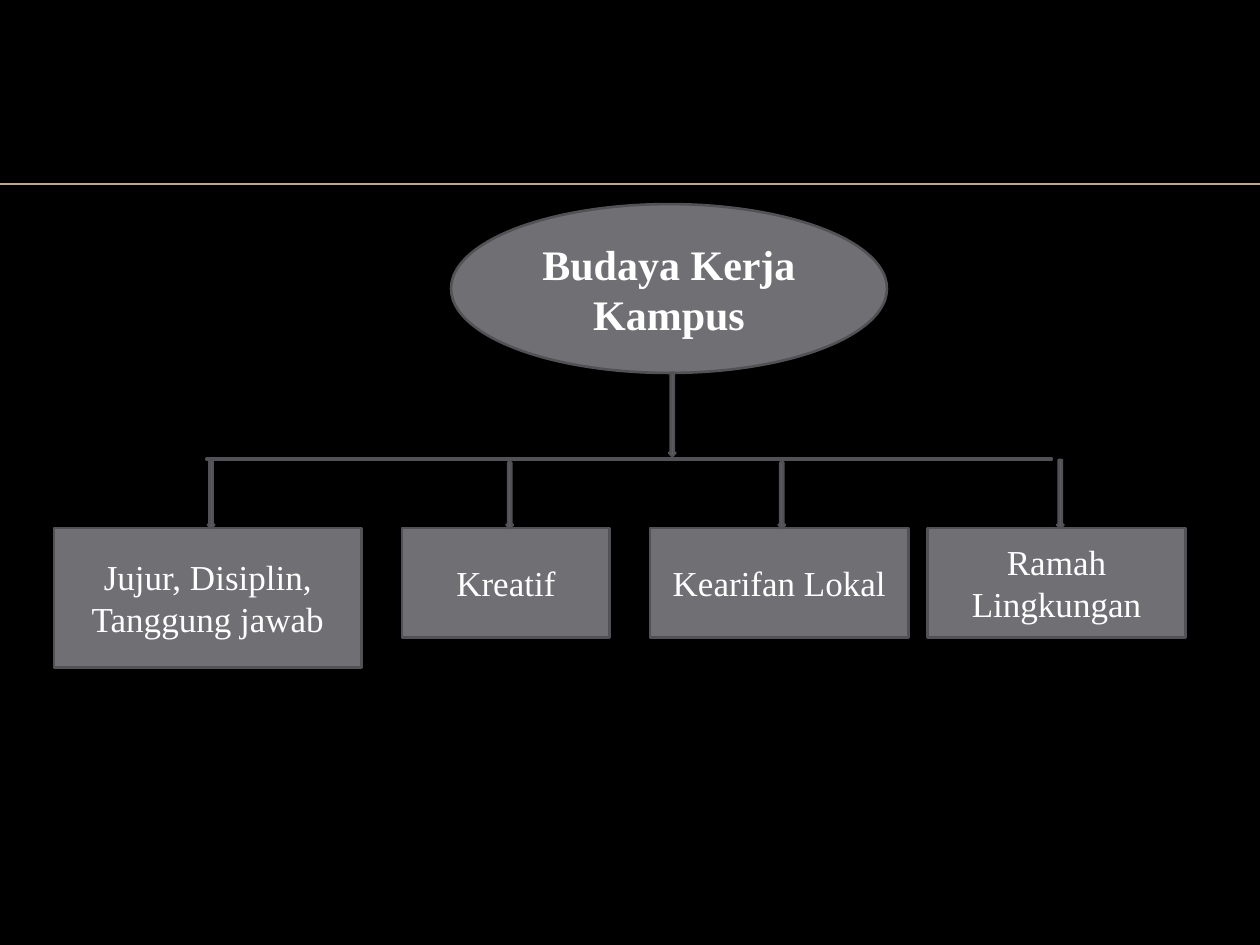
from dataclasses import dataclass

from pptx import Presentation
from pptx import util as u
from pptx.dml.color import RGBColor
from pptx.enum import shapes, text
from pptx.oxml.ns import qn
from lxml import etree


@dataclass(frozen=True)
class Theme:
    background: RGBColor = RGBColor(0x00, 0x00, 0x00)
    rule: RGBColor = RGBColor(0xBB, 0xAA, 0x8A)
    fill: RGBColor = RGBColor(0x6F, 0x6F, 0x74)
    outline: RGBColor = RGBColor(0x52, 0x52, 0x56)
    ink: RGBColor = RGBColor(0xFF, 0xFF, 0xFF)
    font: str = "Times New Roman"
    root_size: int = 24
    branch_size: int = 20


THEME = Theme()
KIND = shapes.MSO_SHAPE

# Chart levels, in inches
ROOT_BOTTOM = 2.96
BAR_TOP, BAR_HEIGHT = 3.62, 0.05
BRANCH_TOP = 4.19
ARROW_WIDTH = 0.05

# Branch label, box left, width, height, arrow left, arrow top
BRANCHES = [
    ("Jujur, Disiplin, Tanggung jawab", 0.43, 2.44, 1.11, 1.65, 3.65),
    ("Kreatif", 3.19, 1.65, 0.87, 4.02, 3.67),
    ("Kearifan Lokal", 5.16, 2.05, 0.87, 6.18, 3.67),
    ("Ramah Lingkungan", 7.36, 2.05, 0.87, 8.39, 3.65),
]


def add_figure(page, kind, left, top, width, height):
    figure = page.shapes.add_shape(
        kind, u.Inches(left), u.Inches(top), u.Inches(width), u.Inches(height))
    figure.shadow.inherit = False
    figure.fill.solid()
    figure.fill.fore_color.rgb = THEME.fill
    figure.line.color.rgb = THEME.outline
    figure.line.width = u.Pt(1.5)
    return figure


def add_label(box, label, size, bold=False):
    frame = box.text_frame
    frame.word_wrap = True
    frame.vertical_anchor = text.MSO_ANCHOR.MIDDLE
    para = frame.paragraphs[0]
    para.alignment = text.PP_ALIGN.CENTER
    span = para.add_run()
    span.text = label
    span.font.name = THEME.font
    span.font.size = u.Pt(size)
    span.font.bold = bold
    span.font.color.rgb = THEME.ink


def add_arrow(page, left, top, bottom):
    add_figure(page, KIND.DOWN_ARROW, left, top, ARROW_WIDTH, bottom - top)


def add_rule(page, top, width):
    rule = page.shapes.add_connector(
        shapes.MSO_CONNECTOR.STRAIGHT,
        u.Inches(0), u.Inches(top), u.Inches(width), u.Inches(top))
    rule.line.color.rgb = THEME.rule
    rule.line.width = u.Pt(1)
    etree.SubElement(rule._element.spPr, qn("a:effectLst"))


def main():
    deck = Presentation()
    deck.slide_width, deck.slide_height = u.Inches(10), u.Inches(7.5)
    page = deck.slides.add_slide(deck.slide_layouts[6])
    page.background.fill.solid()
    page.background.fill.fore_color.rgb = THEME.background

    # Header rule
    add_rule(page, 1.46, 10)

    # Root of the chart
    root = add_figure(page, KIND.OVAL, 3.58, 1.62, 3.46, 1.34)
    add_label(root, "Budaya Kerja Kampus", THEME.root_size, bold=True)

    # Branch boxes
    for label, left, width, height, _, _ in BRANCHES:
        box = add_figure(page, KIND.RECTANGLE, left, BRANCH_TOP, width, height)
        add_label(box, label, THEME.branch_size)

    # Crossbar and arrows
    add_figure(page, KIND.MATH_MINUS, 0.43, BAR_TOP, 9.13, BAR_HEIGHT)
    for *_, left, top in BRANCHES:
        add_arrow(page, left, top, BRANCH_TOP)
    add_arrow(page, 5.31, ROOT_BOTTOM, BAR_TOP)

    deck.save("out.pptx")


if __name__ == "__main__":
    main()
